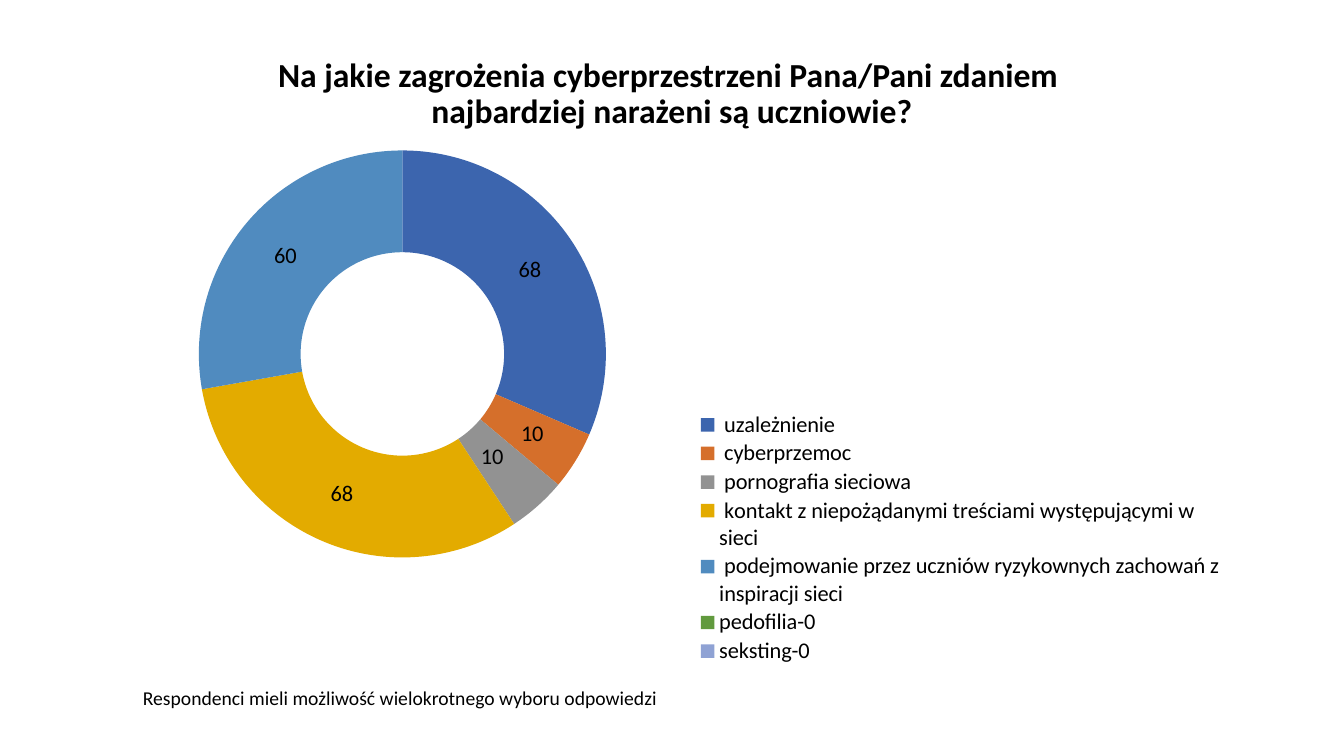
from pptx import Presentation
from pptx.chart.data import CategoryChartData
from pptx.dml.color import RGBColor
from pptx.enum.chart import XL_CHART_TYPE, XL_LEGEND_POSITION
from pptx.enum.text import MSO_ANCHOR, PP_ALIGN
from pptx.oxml import parse_xml
from pptx.oxml.ns import nsdecls
from pptx.util import Pt

DOUGHNUT = XL_CHART_TYPE.DOUGHNUT
BOTTOM = XL_LEGEND_POSITION.BOTTOM
MIDDLE = MSO_ANCHOR.MIDDLE
CENTER = PP_ALIGN.CENTER

THREATS = [
    (" uzależnienie", 68, "3C65AE"),
    (" cyberprzemoc", 10, "D56F2B"),
    (" pornografia sieciowa", 10, "929292"),
    (" kontakt z niepożądanymi treściami występującymi w sieci", 68, "E3AB00"),
    (" podejmowanie przez uczniów ryzykownych zachowań z inspiracji sieci", 60, "508BBF"),
    ("pedofilia-0", 0, "619A3E"),
    ("seksting-0", 0, "8FA2D4"),
]


def style_font(font, size, color="000000", bold=False):
    font.name = "Calibri"
    font.size = Pt(size)
    font.bold = bold
    font.color.rgb = RGBColor.from_string(color)


def set_layout(parent, index, **settings):
    """Give a chart part a manual layout as its child number index."""
    for old in parent.xpath("c:layout"):
        parent.remove(old)
    values = "".join(f'<c:{key} val="{value}"/>' for key, value in settings.items())
    parent.insert(index, parse_xml(
        f'<c:layout {nsdecls("c")}><c:manualLayout>{values}</c:manualLayout></c:layout>'))


prs = Presentation()
prs.slide_width, prs.slide_height = Pt(960), Pt(540)
slide = prs.slides.add_slide(prs.slide_layouts[6])

# Doughnut of answers
answers = CategoryChartData()
answers.categories = [name for name, _, _ in THREATS]
answers.add_series("Series 1", [count for _, count, _ in THREATS])
chart = slide.shapes.add_chart(
    DOUGHNUT, Pt(60), Pt(102.24), Pt(834.5), Pt(373.7), answers).chart
chart.has_title = False
style_font(chart.font, 10)
chart.plots[0].vary_by_categories = True
set_layout(chart.element.xpath("c:chart/c:plotArea")[0], 0,
           layoutTarget="inner", xMode="edge", yMode="edge",
           x=0.064, y=0.014, w=0.417, h=0.778)

threats = chart.plots[0].series[0]
counts = threats.data_labels
counts.show_value = True
counts.show_percentage = False
style_font(counts.font, 16)

# The label of the narrow third slice sits a little nearer the centre
style_font(threats.points[2].data_label.font, 16)
set_layout(chart.element.xpath("//c:ser/c:dLbls/c:dLbl")[0], 1, x=-0.01, y=-0.02)

label_list = chart.element.xpath("//c:ser/c:dLbls")[0]
for index, (_, count, color) in enumerate(THREATS):
    fill = threats.points[index].format.fill
    fill.solid()
    fill.fore_color.rgb = RGBColor.from_string(color)
    if count == 0:
        position = len(label_list.xpath("c:dLbl"))
        label_list.insert(position, parse_xml(
            f'<c:dLbl {nsdecls("c")}><c:idx val="{index}"/><c:delete val="1"/></c:dLbl>'))

chart.has_legend = True
chart.legend.position = BOTTOM
chart.legend.include_in_layout = False
style_font(chart.legend.font, 16)
set_layout(chart.element.xpath("c:chart/c:legend")[0], 1,
           xMode="edge", yMode="edge", x=0.52, y=0.51, w=0.46, h=0.49)

# Question
question = slide.shapes.add_textbox(Pt(66), Pt(28.8), Pt(828), Pt(104.4)).text_frame
question.word_wrap = True
question.vertical_anchor = MIDDLE
question.margin_bottom = Pt(30)
heading = question.paragraphs[0]
heading.alignment = CENTER
heading.line_spacing = 0.9
first_line = heading.add_run()
first_line.text = "Na jakie zagrożenia cyberprzestrzeni Pana/Pani zdaniem "
heading.add_line_break()
second_line = heading.add_run()
second_line.text = "najbardziej narażeni są uczniowie?"
for line in (first_line, second_line):
    style_font(line.font, 24, bold=True)

# Footnote
footnote = slide.shapes.add_textbox(Pt(95), Pt(486.7), Pt(385.2), Pt(24.5)).text_frame
footnote.word_wrap = False
remark = footnote.paragraphs[0].add_run()
remark.text = "Respondenci mieli możliwość wielokrotnego wyboru odpowiedzi"
style_font(remark.font, 14)

prs.save("out.pptx")
